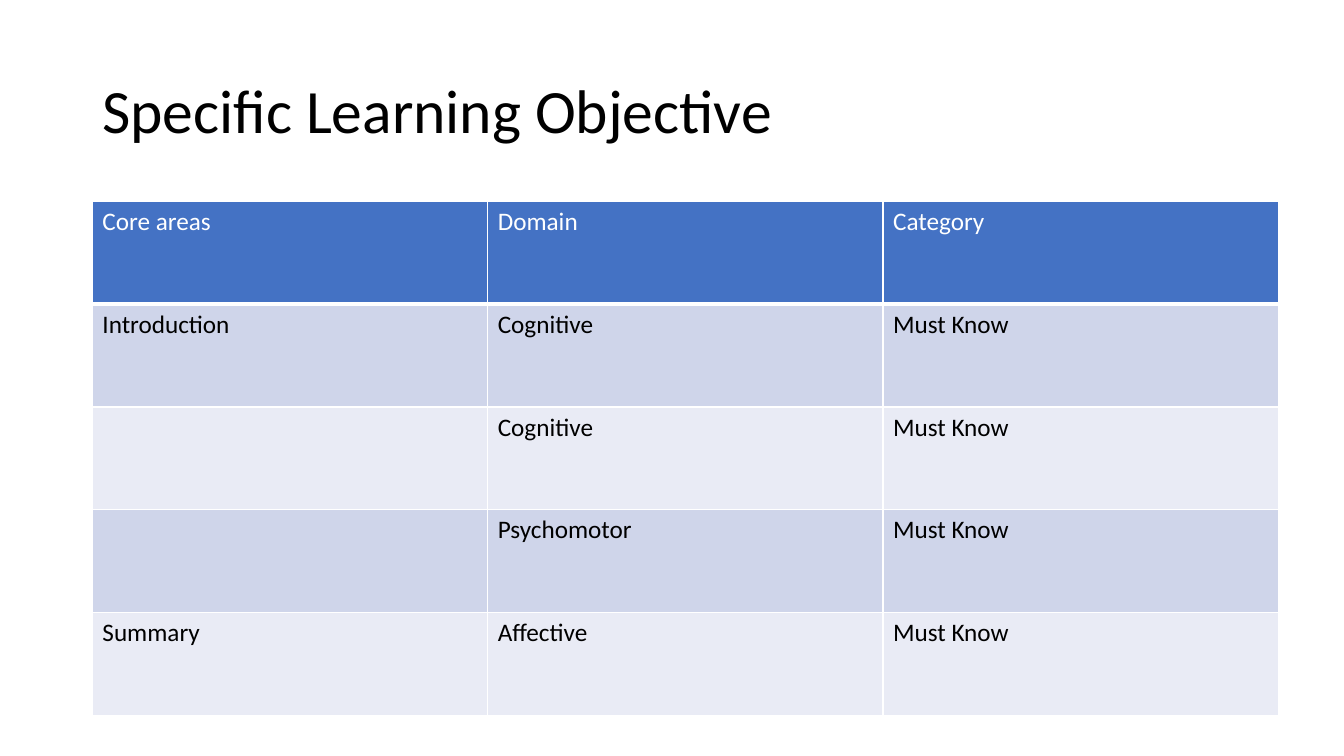
from lxml.etree import SubElement
from pptx import Presentation
from pptx.dml.color import RGBColor
from pptx.enum.text import MSO_ANCHOR
from pptx.oxml.ns import qn
from pptx.util import Pt

HUES = {"text": "000000", "white": "FFFFFF", "head": "4472C4",
        "dark": "CFD5EA", "light": "E9EBF5"}

ROWS = [
    ("Core areas", "Domain", "Category"),
    ("Introduction", "Cognitive", "Must Know"),
    ("", "Cognitive", "Must Know"),
    ("", "Psychomotor", "Must Know"),
    ("Summary", "Affective", "Must Know"),
]


class Deck:
    face = "Calibri"

    def __init__(self, slide):
        self.slide = slide

    def style(self, para, size, hue):
        font = para.font
        font.name, font.size, font.bold = self.face, Pt(size), False
        font.color.rgb = RGBColor.from_string(HUES[hue])

    def title(self, text, left, top, width, height):
        box = self.slide.shapes.add_textbox(Pt(left), Pt(top), Pt(width), Pt(height))
        frame = box.text_frame
        frame.word_wrap = True
        frame.vertical_anchor = MSO_ANCHOR.MIDDLE
        para = frame.paragraphs[0]
        para.text = text
        para.line_spacing = 0.9
        self.style(para, 44, "text")

    def border(self, cell, base):
        props = cell._tc.get_or_add_tcPr()
        for side, width in (("L", 1), ("R", 1), ("T", 1), ("B", base)):
            line = SubElement(props, qn("a:ln" + side), w=str(Pt(width)))
            fill = SubElement(line, qn("a:solidFill"))
            SubElement(fill, qn("a:srgbClr"), val=HUES["white"])

    def table(self, rows, left, top, width, height):
        grid = self.slide.shapes.add_table(
            len(rows), len(rows[0]), Pt(left), Pt(top), Pt(width), Pt(height)).table
        for i, row in enumerate(rows):
            back = "head" if i == 0 else "dark" if i % 2 else "light"
            for j, text in enumerate(row):
                cell = grid.cell(i, j)
                cell.text = text
                self.style(cell.text_frame.paragraphs[0], 18, "text" if i else "white")
                self.border(cell, 1 if i else 3)
                cell.fill.solid()
                cell.fill.fore_color.rgb = RGBColor.from_string(HUES[back])


def main():
    show = Presentation()
    show.slide_width, show.slide_height = Pt(960), Pt(540)
    deck = Deck(show.slides.add_slide(show.slide_layouts[6]))

    # Heading
    deck.title("Specific Learning Objective", 66, 28.75, 828, 104.4)

    # Objectives table
    deck.table(ROWS, 66, 144, 847.2, 367)

    show.save("out.pptx")


if __name__ == "__main__":
    main()
